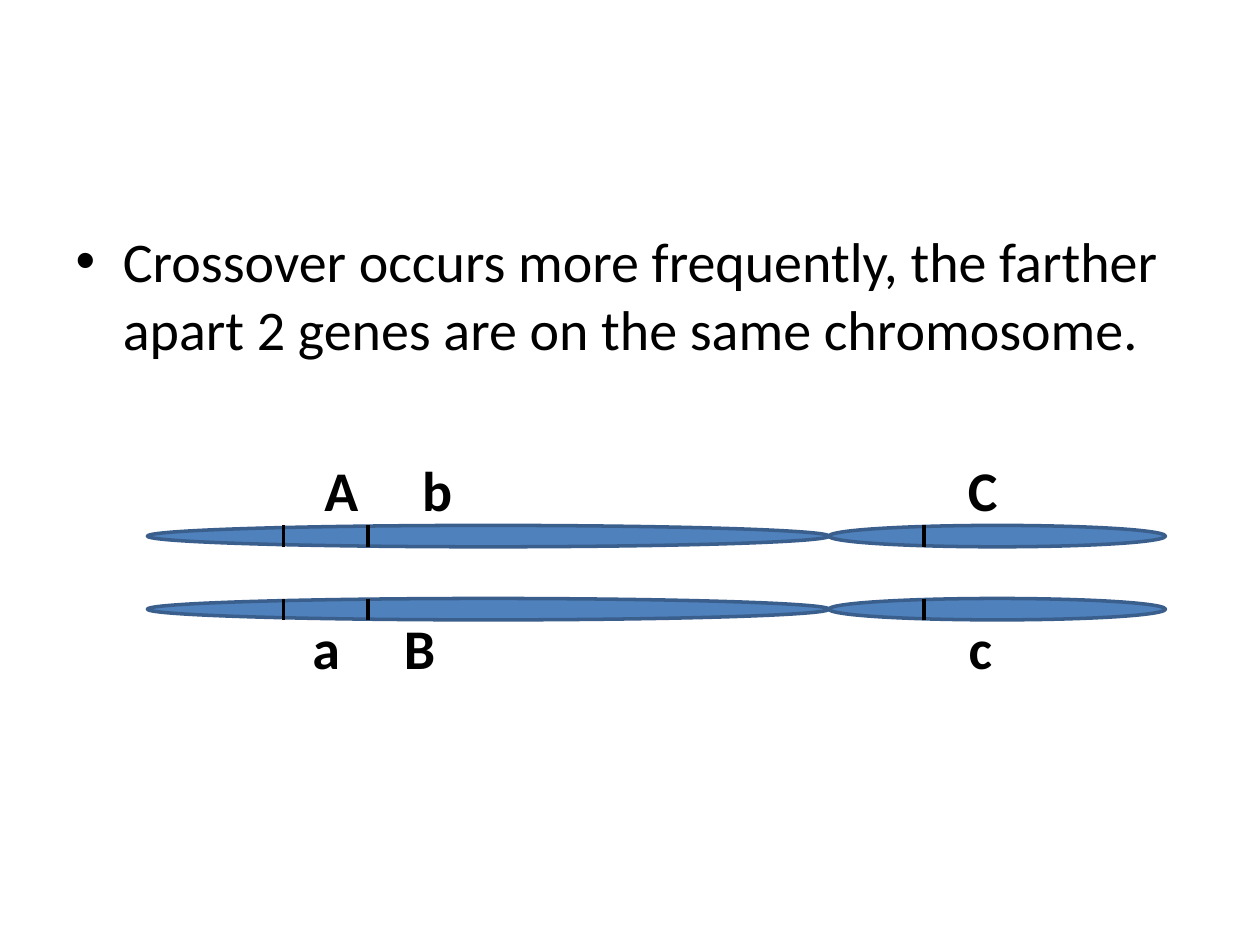
from typing import NamedTuple

from lxml import etree
from pptx import Presentation
from pptx.dml.color import RGBColor
from pptx.enum import shapes as sh, text as tx
from pptx.oxml import ns
from pptx.util import Inches, Pt

BLUE = RGBColor(0x4F, 0x81, 0xBD)
EDGE = RGBColor(0x3A, 0x5F, 0x8C)
BLACK = RGBColor(0, 0, 0)

LEFT, JOINT, RIGHT = 1.17, 6.58, 9.25
THICK = 0.17
GENES = (2.25, 2.92, 7.33)
LABEL = 0.6


class Label(NamedTuple):
    text: str
    mid: float


class Strand(NamedTuple):
    top: float
    label_top: float
    labels: tuple[Label, ...]


STRANDS = (
    Strand(4.17, 3.57, (Label("A", 2.71), Label("b", 3.47), Label("C", 7.8))),
    Strand(4.75, 4.82, (Label("a", 2.59), Label("B", 3.33), Label("c", 7.78))),
)


def write(frame, words: str, *, size: float = 32, bold: bool = False,
          align=tx.PP_ALIGN.LEFT) -> None:
    para = frame.paragraphs[0]
    para.alignment = align
    run = para.add_run()
    run.text = words
    font = run.font
    font.name, font.size, font.bold = "Calibri", Pt(size), bold
    font.color.rgb = BLACK


def draw_arm(slide, left: float, right: float, top: float) -> None:
    arm = slide.shapes.add_shape(
        sh.MSO_SHAPE.OVAL, Inches(left), Inches(top),
        Inches(right - left), Inches(THICK))
    arm.shadow.inherit = False
    arm.fill.solid()
    arm.fill.fore_color.rgb = BLUE
    arm.line.color.rgb = EDGE
    arm.line.width = Pt(2)


def draw_gene(slide, x: float, top: float) -> None:
    mark = slide.shapes.add_connector(
        sh.MSO_CONNECTOR.STRAIGHT, Inches(x), Inches(top),
        Inches(x), Inches(top + THICK))
    mark.line.color.rgb = BLACK
    mark.line.width = Pt(2.25)
    etree.SubElement(mark._element.spPr, ns.qn("a:effectLst"))


def draw_label(slide, label: Label, top: float) -> None:
    box = slide.shapes.add_textbox(
        Inches(label.mid - LABEL / 2), Inches(top),
        Inches(LABEL), Inches(LABEL))
    box.text_frame.word_wrap = True
    write(box.text_frame, label.text, bold=True, align=tx.PP_ALIGN.CENTER)


def draw_strand(slide, strand: Strand) -> None:
    draw_arm(slide, LEFT, JOINT, strand.top)
    draw_arm(slide, JOINT, RIGHT, strand.top)
    for x in GENES:
        draw_gene(slide, x, strand.top)
    for label in strand.labels:
        draw_label(slide, label, strand.label_top)


def main() -> None:
    deck = Presentation()
    deck.slide_width, deck.slide_height = Inches(10), Inches(7.5)
    slide = deck.slides.add_slide(deck.slide_layouts.get_by_name("Title and Content"))
    title = slide.shapes.title._element
    title.getparent().remove(title)

    body = slide.placeholders[1]
    body.left, body.top = Inches(0.5), Inches(1.75)
    body.width, body.height = Inches(9), Inches(4.95)
    write(body.text_frame, "Crossover occurs more frequently, the farther "
          "apart 2 genes are on the same chromosome.")

    for strand in STRANDS:
        draw_strand(slide, strand)
    deck.save("out.pptx")


if __name__ == "__main__":
    main()
